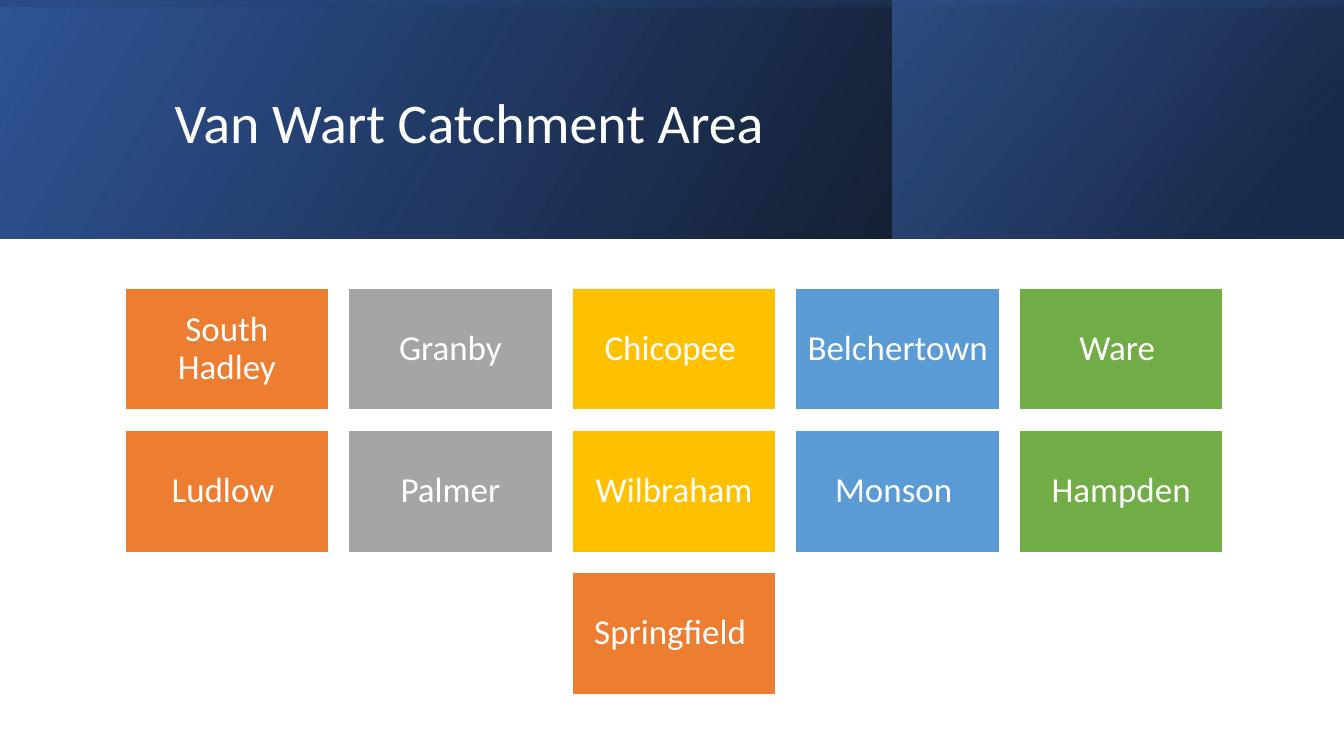
from dataclasses import dataclass

from lxml import etree
from pptx import Presentation
from pptx.dml.color import RGBColor
from pptx.enum.shapes import MSO_SHAPE
from pptx.enum.text import MSO_ANCHOR, PP_ALIGN
from pptx.oxml.ns import qn
from pptx.util import Inches, Pt

RECT = MSO_SHAPE.RECTANGLE
MIDDLE = MSO_ANCHOR.MIDDLE
LEFT, CENTER = PP_ALIGN.LEFT, PP_ALIGN.CENTER


@dataclass(frozen=True)
class Theme:
    font: str = "Calibri"
    title_size: int = 40
    tile_size: int = 25
    white: str = "FFFFFF"
    black: str = "000000"
    blue: str = "2F5597"
    navy: str = "203864"
    sky: str = "4472C4"
    tiles: tuple = ("ED7D31", "A5A5A5", "FFC000", "5B9BD5", "70AD47")


THEME = Theme()
SLIDE_W, SLIDE_H = 13.33, 7.5
BANNER_H = 2.37
TOWNS = [
    ["South Hadley", "Granby", "Chicopee ", "Belchertown ", "Ware "],
    ["Ludlow ", "Palmer", "Wilbraham", "Monson ", "Hampden"],
    ["Springfield "],
]


def add_rect(slide, x, y, w, h):
    sp = slide.shapes.add_shape(RECT, Inches(x), Inches(y), Inches(w), Inches(h))
    sp.shadow.inherit = False
    return sp


def write(sp, text, size, align):
    """Fill a shape with one vertically centred white paragraph."""
    tf = sp.text_frame
    tf.word_wrap = True
    tf.vertical_anchor = MIDDLE
    p = tf.paragraphs[0]
    p.alignment = align
    p.line_spacing = 0.9
    r = p.add_run()
    r.text = text
    r.font.name = THEME.font
    r.font.size = Pt(size)
    r.font.color.rgb = RGBColor.from_string(THEME.white)


def add_gradient_panel(slide, box, stops, angle, rotation=0):
    """Add a mirrored panel; stops are (position %, colour, opacity %)."""
    sp = add_rect(slide, *box)
    sp.rotation = rotation
    sp.line.fill.background()
    sp_pr = sp._element.spPr
    sp_pr.find(qn("a:xfrm")).set("flipH", "1")
    grad = etree.Element(qn("a:gradFill"), rotWithShape="1")
    stop_list = etree.SubElement(grad, qn("a:gsLst"))
    for position, color, opacity in stops:
        gs = etree.SubElement(stop_list, qn("a:gs"), pos=str(position * 1000))
        clr = etree.SubElement(gs, qn("a:srgbClr"), val=color)
        etree.SubElement(clr, qn("a:alpha"), val=str(opacity * 1000))
    etree.SubElement(grad, qn("a:lin"), ang=str(angle * 60000), scaled="0")
    sp_pr.find(qn("a:prstGeom")).addnext(grad)


def add_banner(slide, x, y, w, h, title):
    t = THEME
    side_w = 4.48
    add_gradient_panel(slide, (x, y, w, h),
                       [(0, t.black, 96), (100, t.blue, 100)], 330)
    add_gradient_panel(slide, (x + w - side_w, y, side_w, h),
                       [(19, t.navy, 68), (100, t.sky, 48)], 320)
    # Upright panel that covers the banner once turned on its side
    upright = (x + (w - h) / 2, y + (h - w) / 2, h, w)
    add_gradient_panel(slide, upright,
                       [(23, t.blue, 16), (99, t.black, 45)], 350, 270)
    box = slide.shapes.add_textbox(Inches(x + 1.51), Inches(y + 0.38),
                                   Inches(10.63), Inches(1.72))
    write(box, title, t.title_size, LEFT)


def add_town_grid(slide, x, y, w, h, rows):
    """Spread tiles over the box, centring rows that are not full."""
    tile_w, tile_h = 2.02, 1.21
    columns = len(rows[0])
    step_x = (w - tile_w) / (columns - 1)
    step_y = (h - tile_h) / (len(rows) - 1)
    for i, row in enumerate(rows):
        start = (columns - len(row)) / 2
        for j, town in enumerate(row):
            sp = add_rect(slide, x + (start + j) * step_x, y + i * step_y,
                          tile_w, tile_h)
            sp.fill.solid()
            sp.fill.fore_color.rgb = RGBColor.from_string(THEME.tiles[j])
            sp.line.color.rgb = RGBColor.from_string(THEME.white)
            sp.line.width = Pt(1)
            tf = sp.text_frame
            tf.margin_left = tf.margin_right = Inches(0.1)
            tf.margin_top = tf.margin_bottom = Inches(0.1)
            write(sp, town, THEME.tile_size, CENTER)


def main():
    prs = Presentation()
    prs.slide_width, prs.slide_height = Inches(SLIDE_W), Inches(SLIDE_H)
    slide = prs.slides.add_slide(prs.slide_layouts[6])
    add_banner(slide, 0, 0, SLIDE_W, BANNER_H, " Van Wart Catchment Area")
    add_town_grid(slide, 1.24, 2.86, 10.89, 4.03, TOWNS)
    prs.save("out.pptx")


if __name__ == "__main__":
    main()
